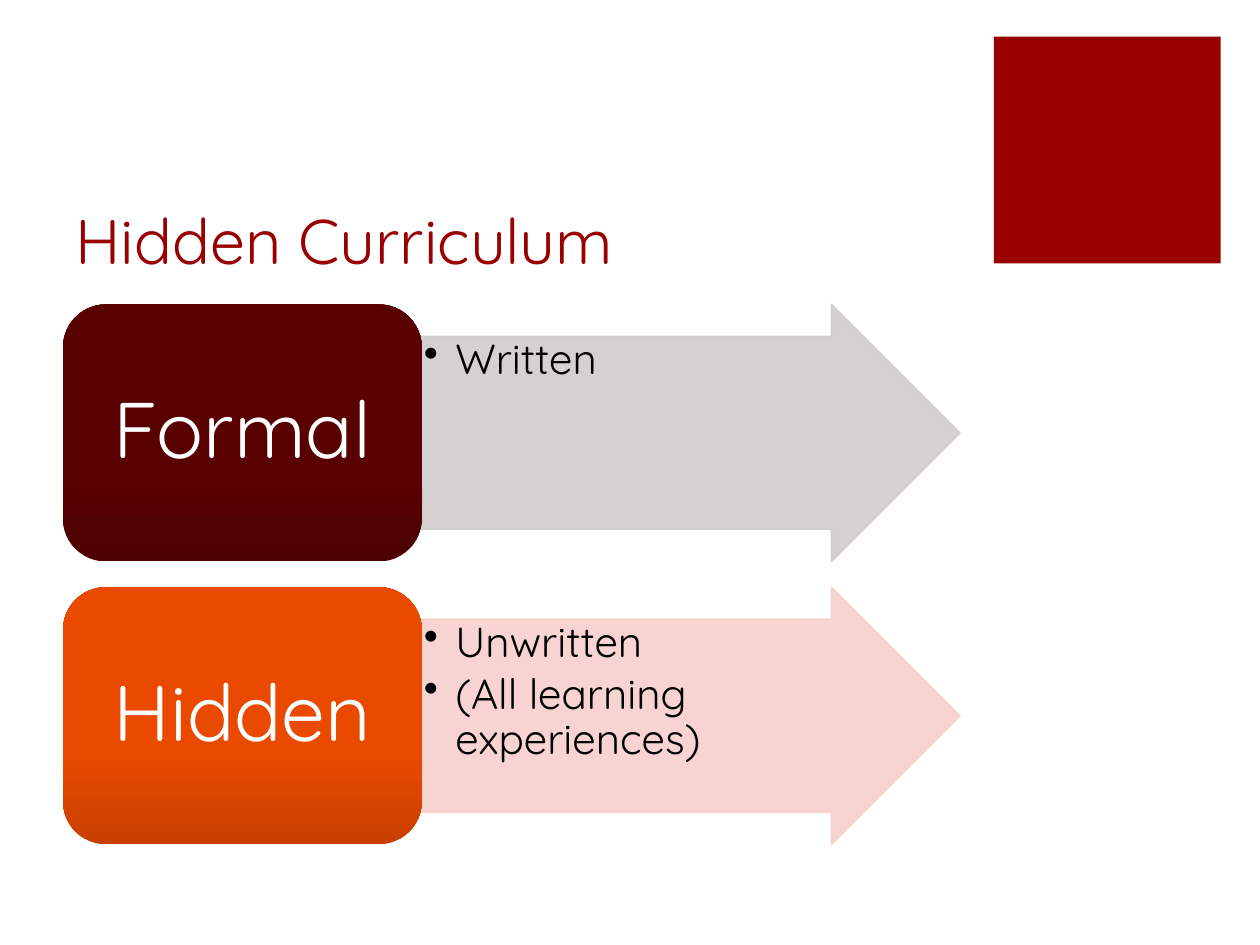
import pptx
import pptx.util
import pptx.dml.color
import pptx.enum.shapes
import pptx.enum.text
import pptx.oxml.ns
from lxml import etree

Pt = pptx.util.Pt
SHAPE = pptx.enum.shapes.MSO_SHAPE
ALIGN = pptx.enum.text.PP_ALIGN
ANCHOR = pptx.enum.text.MSO_ANCHOR
qn = pptx.oxml.ns.qn

FONT = "Quicksand"
COLORS = {
    "accent": "990000",
    "text": "000000",
    "label": "FFFFFF",
    "formal": "590000",
    "formal_edge": "4C0000",
    "formal_arrow": "D1CCCC",
    "hidden": "E94A00",
    "hidden_edge": "C83F00",
    "hidden_arrow": "F7D0CC",
}
ROWS = [
    ("formal", "Formal", ["Written"]),
    ("hidden", "Hidden", ["Unwritten", "(All learning experiences)"]),
]


def rgb(name):
    return pptx.dml.color.RGBColor.from_string(COLORS[name])


def add_block(page, kind, left, top, width, height):
    block = page.shapes.add_shape(kind, Pt(left), Pt(top), Pt(width), Pt(height))
    block.shadow.inherit = False
    block.line.fill.background()
    return block


def write(frame, lines, size, color, anchor, align, insets):
    """Fill a text frame; insets are left, top, right, bottom."""
    frame.word_wrap = True
    frame.vertical_anchor = anchor
    frame.margin_left, frame.margin_top, frame.margin_right, frame.margin_bottom = map(Pt, insets)
    frame.text = "\n".join(lines)
    for para in frame.paragraphs:
        para.alignment = align
        for span in para.runs:
            span.font.name = FONT
            span.font.size = Pt(size)
            span.font.color.rgb = rgb(color)


def add_bullet(para, indent):
    props = para._p.get_or_add_pPr()
    props.set("marL", str(Pt(indent)))
    props.set("indent", str(-Pt(indent)))
    etree.SubElement(props, qn("a:buChar"), char="•")


def set_opacity(shape, percent):
    for color in shape._element.spPr.iter(qn("a:srgbClr")):
        etree.SubElement(color, qn("a:alpha"), val=str(percent * 1000))


def add_title(page, left, top, width, height):
    box = page.shapes.add_textbox(Pt(left), Pt(top), Pt(width), Pt(height))
    write(box.text_frame, ["Hidden Curriculum"], 36, "accent",
          ANCHOR.BOTTOM, ALIGN.LEFT, (7.2, 3.6, 7.2, 3.6))


def add_arrow(page, name, points, left, top, width, height):
    arrow = add_block(page, SHAPE.RIGHT_ARROW, left, top, width, height)
    arrow.adjustments[0] = 0.75
    arrow.adjustments[1] = 0.5
    arrow.fill.solid()
    arrow.fill.fore_color.rgb = rgb(name)
    arrow.line.color.rgb = rgb(name)
    arrow.line.width = Pt(1)
    set_opacity(arrow, 90)
    write(arrow.text_frame, points, 24, "text", ANCHOR.TOP, ALIGN.LEFT, (1.2, 1.2, 37, 1.2))
    for para in arrow.text_frame.paragraphs:
        para.line_spacing = 0.9
        para.space_after = Pt(3.6)
        add_bullet(para, 18)


def add_label(page, name, label, left, top, width, height):
    box = add_block(page, SHAPE.ROUNDED_RECTANGLE, left, top, width, height)
    box.fill.gradient()
    box.fill.gradient_angle = 90
    edge, body = box.fill.gradient_stops
    edge.color.rgb = rgb(name + "_edge")
    edge.position = 0
    body.color.rgb = rgb(name)
    body.position = 0.35
    write(box.text_frame, [label], 45, "label", ANCHOR.MIDDLE, ALIGN.CENTER,
          (13.5, 6.75, 13.5, 6.75))
    box.text_frame.paragraphs[0].line_spacing = 0.9


def add_row(page, name, label, points, left, top, width, height):
    label_width = width * 0.4
    add_arrow(page, name + "_arrow", points, left + label_width, top, width - label_width, height)
    add_label(page, name, label, left, top, label_width, height)


def add_rows(page, left, top, width, height):
    """Stack the rows with a gap of a tenth of a row between them."""
    row_height = height / (len(ROWS) * 1.1 - 0.1)
    for index, (name, label, points) in enumerate(ROWS):
        add_row(page, name, label, points, left, top + index * row_height * 1.1, width, row_height)


def main():
    deck = pptx.Presentation()
    deck.slide_width, deck.slide_height = Pt(720), Pt(540)
    page = deck.slides.add_slide(deck.slide_layouts[6])
    square = add_block(page, SHAPE.RECTANGLE, 568, 21, 129.6, 129.6)
    square.fill.solid()
    square.fill.fore_color.rgb = rgb("accent")
    add_title(page, 36, 72, 512.6, 90)
    add_rows(page, 36, 174, 512.6, 308.5)
    deck.save("out.pptx")


if __name__ == "__main__":
    main()
